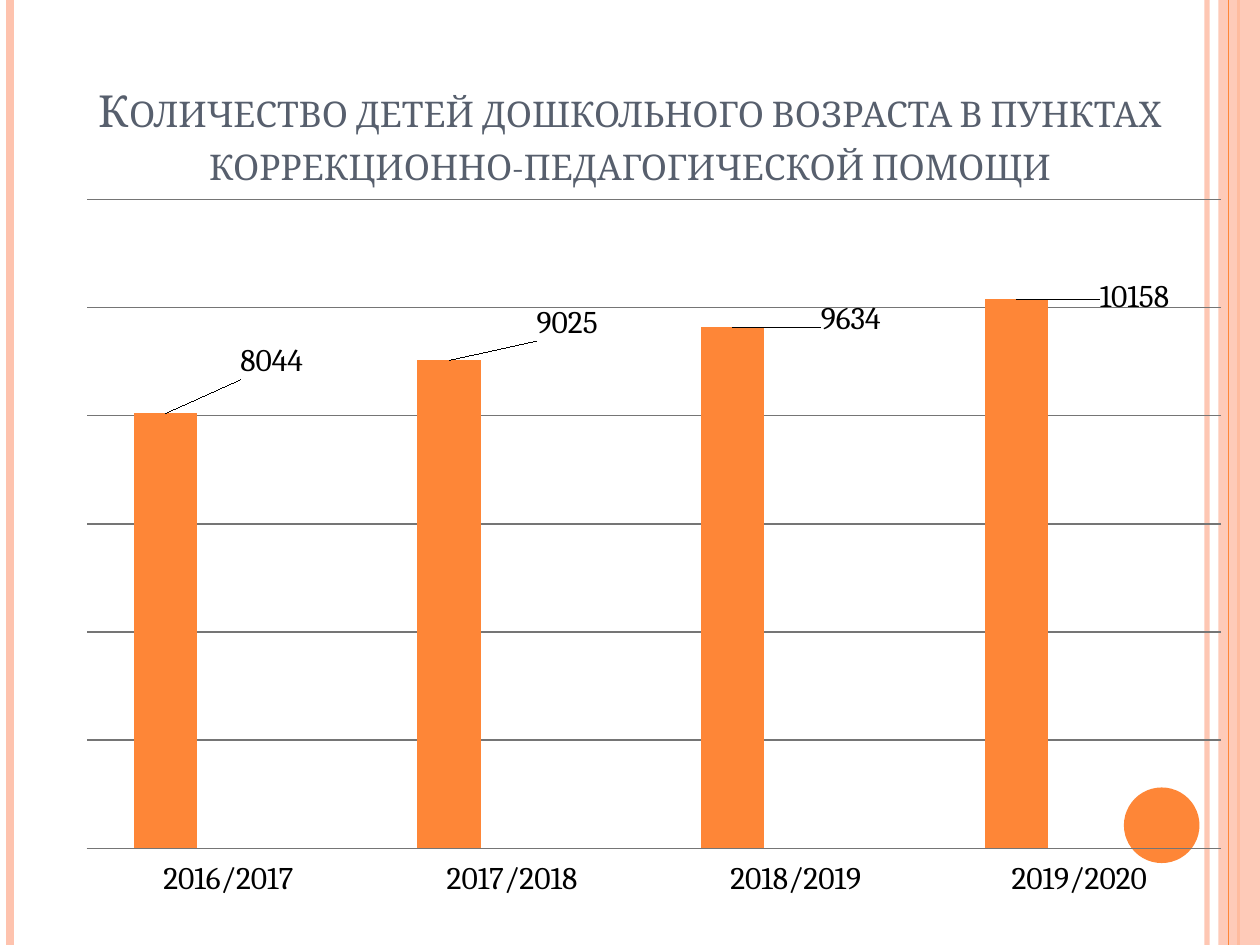
from lxml import etree
from pptx import Presentation
from pptx.chart.data import CategoryChartData
from pptx.dml.color import RGBColor
from pptx.enum.chart import XL_CHART_TYPE, XL_LABEL_POSITION, XL_TICK_LABEL_POSITION, XL_TICK_MARK
from pptx.enum.shapes import MSO_CONNECTOR, MSO_SHAPE
from pptx.enum.text import MSO_ANCHOR, PP_ALIGN
from pptx.oxml.ns import qn
from pptx.util import Inches, Pt

COLUMNS = XL_CHART_TYPE.COLUMN_CLUSTERED
OUTSIDE_END = XL_LABEL_POSITION.OUTSIDE_END
LABELS_LOW = XL_TICK_LABEL_POSITION.LOW
NO_TICK = XL_TICK_MARK.NONE
STRAIGHT = MSO_CONNECTOR.STRAIGHT
RECTANGLE = MSO_SHAPE.RECTANGLE
OVAL = MSO_SHAPE.OVAL
BOTTOM = MSO_ANCHOR.BOTTOM
CENTER = PP_ALIGN.CENTER

FONT = "Cambria"
ORANGE = "FE8637"
PEACH = "FEC3AE"
GRID = "757575"
WIDTH, HEIGHT = 10, 7.5

TITLE = "Количество детей дошкольного возраста в пунктах коррекционно-педагогической помощи"
YEARS = ["2016/2017", "2017/2018", "2018/2019", "2019/2020"]
SERIES = [
    ("Series 1", [8044, 9025, 9634, 10158], ORANGE),
    ("Series 2", [None] * 4, "7598D9"),
    ("Series 3", [None] * 4, "B32C16"),
]
LABEL_SHIFTS = [(0.09, -0.04), (0.1, -0.02), (0.1, 0.02), (0.1, 0.03)]


def color(hex_code):
    return RGBColor.from_string(hex_code)


def set_opacity(shape, percent):
    for tone in shape.element.spPr.iter(qn("a:srgbClr")):
        etree.SubElement(tone, qn("a:alpha")).set("val", str(percent * 1000))


def add_stripe(page, x, top, height, hex_code, weight):
    stripe = page.shapes.add_connector(
        STRAIGHT, Inches(x), Inches(top), Inches(x), Inches(top + height))
    stripe.line.color.rgb = color(hex_code)
    stripe.line.width = Pt(weight)
    etree.SubElement(stripe.element.spPr, qn("a:effectLst"))
    return stripe


def add_solid(page, kind, left, top, width, height, hex_code):
    solid = page.shapes.add_shape(
        kind, Inches(left), Inches(top), Inches(width), Inches(height))
    solid.shadow.inherit = False
    solid.fill.solid()
    solid.fill.fore_color.rgb = color(hex_code)
    solid.line.fill.background()
    return solid


def add_frame(page, left, top, width, height):
    right = left + width
    set_opacity(add_stripe(page, right - 0.42, top, height, PEACH, 3), 93)
    add_stripe(page, left + 0.08, top, height, PEACH, 4.5)
    add_stripe(page, right - 0.17, top, height, ORANGE, 1.5)
    band = add_solid(page, RECTANGLE, right - 0.33, top, 0.33, height, PEACH)
    set_opacity(band, 87)
    add_stripe(page, right - 0.25, top, height, ORANGE, 0.75)
    add_solid(page, OVAL, right - 1.08, top + height - 1.25, 0.6, 0.6, ORANGE)


def add_title(page, left, top, width, height):
    box = page.shapes.add_textbox(Inches(left), Inches(top), Inches(width), Inches(height))
    frame = box.text_frame
    frame.word_wrap = True
    frame.vertical_anchor = BOTTOM
    para = frame.paragraphs[0]
    para.alignment = CENTER
    para.font.name = FONT
    para.font.size = Pt(25.2)
    para.font.color.rgb = color("575F6D")
    span = para.add_run()
    span.text = TITLE
    span._r.get_or_add_rPr().set("cap", "small")


def make_layout(**settings):
    layout = etree.Element(qn("c:layout"))
    manual = etree.SubElement(layout, qn("c:manualLayout"))
    for name, value in settings.items():
        etree.SubElement(manual, qn(f"c:{name}")).set("val", str(value))
    return layout


def place_plot(chart):
    area = chart.element.find(f".//{qn('c:plotArea')}")
    for old in area.findall(qn("c:layout")):
        area.remove(old)
    area.insert(0, make_layout(
        layoutTarget="inner", xMode="edge", yMode="edge", x=0.02, y=0.02, w=0.96, h=0.9))


def label_points(chart, series):
    for index in range(len(YEARS)):
        series.points[index].data_label.position = OUTSIDE_END
    for label, (x, y) in zip(chart.element.iter(qn("c:dLbl")), LABEL_SHIFTS):
        label.insert(1, make_layout(x=x, y=y))


def style_axes(chart):
    years = chart.category_axis
    years.major_tick_mark = NO_TICK
    years.minor_tick_mark = NO_TICK
    years.tick_label_position = LABELS_LOW
    years.format.line.color.rgb = color(GRID)
    counts = chart.value_axis
    counts.minimum_scale = 0
    counts.maximum_scale = 12000
    counts.major_unit = 2000
    counts.has_major_gridlines = True
    counts.major_gridlines.format.line.color.rgb = color(GRID)
    counts.visible = False


def add_children_chart(page, left, top, width, height):
    data = CategoryChartData()
    data.categories = YEARS
    for name, values, _ in SERIES:
        data.add_series(name, values)
    chart = page.shapes.add_chart(
        COLUMNS, Inches(left), Inches(top), Inches(width), Inches(height), data).chart
    chart.has_title = False
    chart.has_legend = False
    chart.font.name = FONT
    chart.font.size = Pt(18)
    chart.font.color.rgb = color("000000")
    plot = chart.plots[0]
    plot.gap_width = 150
    plot.overlap = 0
    plot.vary_by_categories = False
    for series, (_, _, hex_code) in zip(plot.series, SERIES):
        series.format.fill.solid()
        series.format.fill.fore_color.rgb = color(hex_code)
    style_axes(chart)
    place_plot(chart)
    label_points(chart, plot.series[0])


def main():
    deck = Presentation()
    deck.slide_width = Inches(WIDTH)
    deck.slide_height = Inches(HEIGHT)
    page = deck.slides.add_slide(deck.slide_layouts[6])
    add_frame(page, 0, 0, WIDTH, HEIGHT)
    add_title(page, 0.5, 0.68, 9, 0.87)
    add_children_chart(page, 0.5, 1.47, 9.38, 5.72)
    deck.save("out.pptx")


if __name__ == "__main__":
    main()
